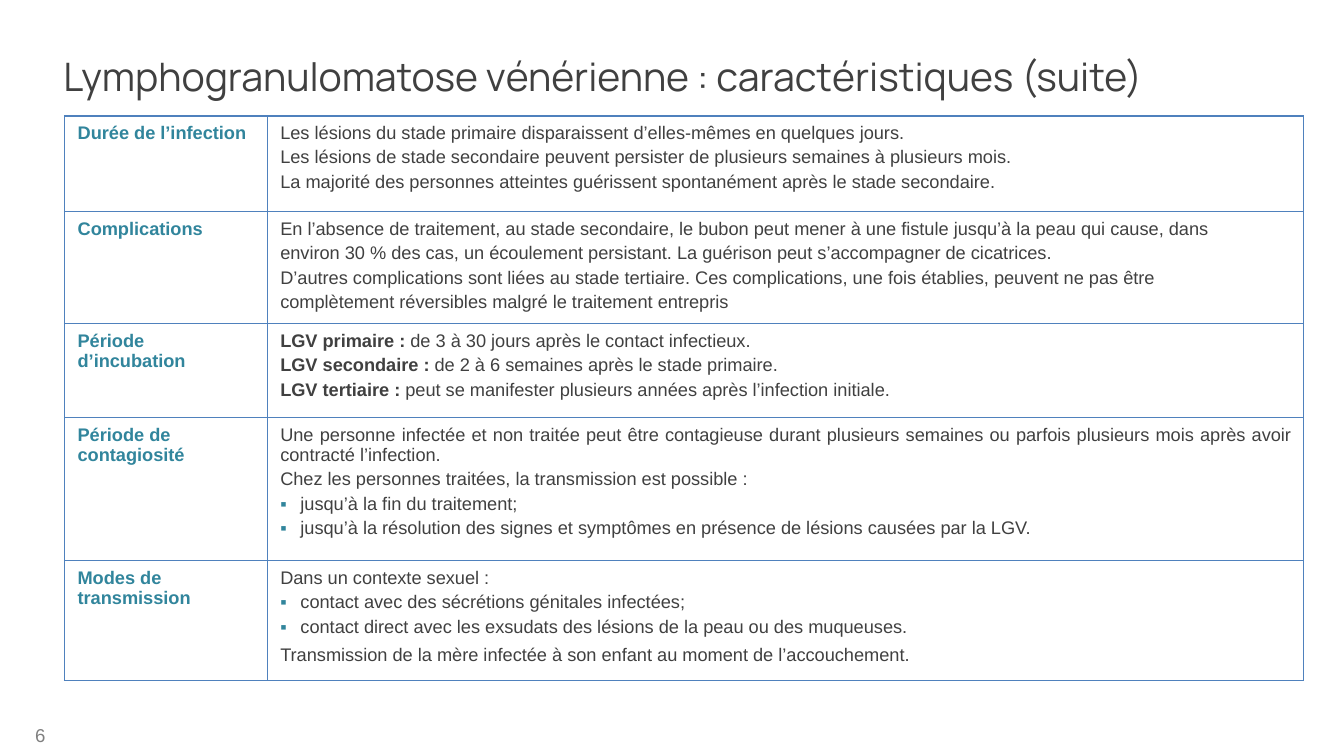
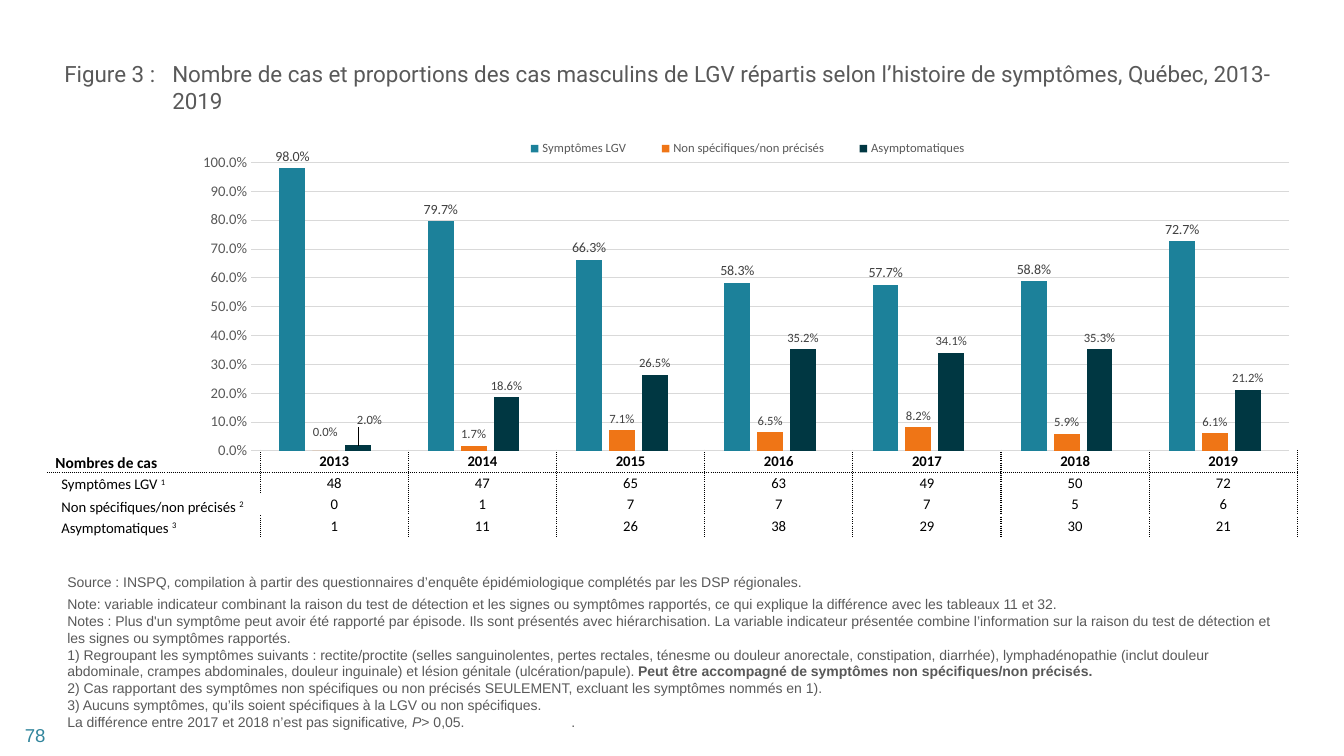
from lxml import etree
from pptx import Presentation
from pptx.chart.data import CategoryChartData
from pptx.dml.color import RGBColor
from pptx.enum.chart import XL_CHART_TYPE, XL_LABEL_POSITION, XL_LEGEND_POSITION, XL_TICK_MARK
from pptx.enum.text import MSO_ANCHOR, PP_ALIGN
from pptx.oxml import parse_xml
from pptx.oxml.ns import nsdecls, qn
from pptx.util import Inches, Pt

TEAL = RGBColor(0x31, 0x85, 0x9C)
DARK = RGBColor(0x40, 0x40, 0x40)
GREY = RGBColor(0x59, 0x59, 0x59)
PALE = RGBColor(0x80, 0x80, 0x80)
BLACK = RGBColor(0, 0, 0)
WHITE = RGBColor(0xFF, 0xFF, 0xFF)
BLUE = RGBColor(0x4F, 0x81, 0xBD)
GRID = RGBColor(0xD9, 0xD9, 0xD9)
SEA = RGBColor(0x1C, 0x81, 0x9A)
AMBER = RGBColor(0xEF, 0x75, 0x16)
NAVY = RGBColor(0x00, 0x37, 0x42)
LEFT, RIGHT, MID, FULL = PP_ALIGN.LEFT, PP_ALIGN.RIGHT, PP_ALIGN.CENTER, PP_ALIGN.JUSTIFY
TOP, CENTER, BOTTOM = MSO_ANCHOR.TOP, MSO_ANCHOR.MIDDLE, MSO_ANCHOR.BOTTOM
COLUMN = XL_CHART_TYPE.COLUMN_CLUSTERED
OUTER = XL_LABEL_POSITION.OUTSIDE_END
UPPER = XL_LEGEND_POSITION.TOP
NONE = XL_TICK_MARK.NONE


def write(para, text, name, size, color, align=LEFT):
    para.alignment = align
    for i, part in enumerate(text.split("*")):
        if part:
            run = para.add_run()
            run.text = part
            run.font.name, run.font.size = name, Pt(size)
            run.font.color.rgb = color
            run.font.bold = i % 2 == 1


def edge(cell, sides, color, dash):
    props = cell._tc.get_or_add_tcPr()
    for i, side in enumerate(sides):
        props.insert(i, parse_xml(
            f'<a:ln{side} {nsdecls("a")} w="12700"><a:solidFill><a:srgbClr val="{color}"/>'
            f'</a:solidFill><a:prstDash val="{dash}"/></a:ln{side}>'))


prs = Presentation()
prs.slide_width, prs.slide_height = Inches(13.33), Inches(7.5)
traits, figure = [prs.slides.add_slide(prs.slide_layouts[6]) for _ in range(2)]

NOTES = [
    "Note: variable indicateur combinant la raison du test de détection et les signes ou symptômes rapportés, ce qui explique la différence avec les tableaux 11 et 32.",
    "Notes : Plus d'un symptôme peut avoir été rapporté par épisode. Ils sont présentés avec hiérarchisation. La variable indicateur présentée combine l’information sur la raison du test de détection et les signes ou symptômes rapportés.",
    "1) Regroupant les symptômes suivants : rectite/proctite (selles sanguinolentes, pertes rectales, ténesme ou douleur anorectale, constipation, diarrhée), lymphadénopathie (inclut douleur abdominale, crampes abdominales, douleur inguinale) et lésion génitale (ulcération/papule). *Peut être accompagné de symptômes non spécifiques/non précisés.*",
    "2) Cas rapportant des symptômes non spécifiques ou non précisés SEULEMENT, excluant les symptômes nommés en 1).",
    "3) Aucuns symptômes, qu’ils soient spécifiques à la LGV ou non spécifiques.",
    "La différence entre 2017 et 2018 n’est pas significative*, P*> 0,05.\t.",
]
SOURCE = "Source : INSPQ, compilation à partir des questionnaires d’enquête épidémiologique complétés par les DSP régionales."
HEAD = "Lymphogranulomatose vénérienne : caractéristiques (suite)"
CAPTION = "Figure 3 : \tNombre de cas et proportions des cas masculins de LGV répartis selon l’histoire de symptômes, Québec, 2013-2019"
FOOT = (0, 7.09, 0.55, 0.4)
texts = [
    (traits, (0.53, 0.13, 12, 1.25), CENTER, [HEAD], "Manrope", 28, DARK, LEFT),
    (traits, FOOT, CENTER, ["6"], "Arial", 13.3, PALE, RIGHT),
    (figure, FOOT, CENTER, ["78"], "Arial", 13.3, TEAL, RIGHT),
    (figure, (0.57, 5.86, 12.17, 1.45), TOP, NOTES, "Arial", 10, GREY, LEFT),
    (figure, (0.57, 5.64, 9, 0.27), TOP, [SOURCE], "Arial", 10, GREY, LEFT),
    (figure, (0.54, 0.55, 12.32, 0.64), TOP, [CAPTION], "Roboto", 16, GREY, LEFT),
]
for slide, spot, anchor, lines, name, size, color, align in texts:
    frame = slide.shapes.add_textbox(*map(Inches, spot)).text_frame
    frame.word_wrap, frame.vertical_anchor = True, anchor
    for i, line in enumerate(lines):
        para = frame.add_paragraph() if i else frame.paragraphs[0]
        write(para, line, name, size, color, align)
        props = para._p.get_or_add_pPr()
        if "\tNombre" in line:
            hang = Inches(1.07)
            props.set("marL", str(hang))
            props.set("indent", str(-hang))
        if ", P" in line:
            stops = etree.SubElement(props, qn("a:tabLst"))
            etree.SubElement(stops, qn("a:tab"), pos=str(Inches(5)), algn="l")
            para.runs[1].font.bold, para.runs[1].font.italic = False, True

ROWS = [
    ("Durée de l’infection", 0.95, [
        "Les lésions du stade primaire disparaissent d’elles-mêmes en quelques jours.",
        "Les lésions de stade secondaire peuvent persister de plusieurs semaines à plusieurs mois.",
        "La majorité des personnes atteintes guérissent spontanément après le stade secondaire."]),
    ("Complications", 1.11, [
        "En l’absence de traitement, au stade secondaire, le bubon peut mener à une fistule jusqu’à la peau qui cause, dans",
        "environ 30 % des cas, un écoulement persistant. La guérison peut s’accompagner de cicatrices.",
        "D’autres complications sont liées au stade tertiaire. Ces complications, une fois établies, peuvent ne pas être",
        "complètement réversibles malgré le traitement entrepris"]),
    ("Période d’incubation", 0.93, [
        "*LGV primaire :* de 3 à 30 jours après le contact infectieux.",
        "*LGV secondaire :* de 2 à 6 semaines après le stade primaire.",
        "*LGV tertiaire :* peut se manifester plusieurs années après l’infection initiale."]),
    ("Période de contagiosité", 1.42, [
        "Une personne infectée et non traitée peut être contagieuse durant plusieurs semaines ou parfois plusieurs mois après avoir contracté l’infection.",
        "Chez les personnes traitées, la transmission est possible :",
        "▪jusqu’à la fin du traitement;",
        "▪jusqu’à la résolution des signes et symptômes en présence de lésions causées par la LGV."]),
    ("Modes de transmission", 1.19, [
        "Dans un contexte sexuel :",
        "▪contact avec des sécrétions génitales infectées;",
        "▪contact direct avec les exsudats des lésions de la peau ou des muqueuses.",
        "Transmission de la mère infectée à son enfant au moment de l’accouchement."]),
]
table = traits.shapes.add_table(
    len(ROWS), 2, Inches(0.64), Inches(1.15), Inches(12.29), Inches(5.6)).table
table.first_row = table.horz_banding = False
table.columns[0].width, table.columns[1].width = Inches(2.01), Inches(10.28)
for r, (label, high, lines) in enumerate(ROWS):
    table.rows[r].height = Inches(high)
    for c in range(2):
        cell = table.cell(r, c)
        cell.fill.solid()
        cell.fill.fore_color.rgb = WHITE
        cell.margin_left = cell.margin_right = Inches(0.13)
        cell.margin_top, cell.margin_bottom = Inches(0.07), Inches(0.05)
        edge(cell, "LRTB", BLUE, "solid")
    write(table.cell(r, 0).text_frame.paragraphs[0], f"*{label}*", "Arial", 13, TEAL)
    frame = table.cell(r, 1).text_frame
    for i, line in enumerate(lines):
        para = frame.add_paragraph() if i else frame.paragraphs[0]
        if line.startswith("▪"):
            hang = Inches(0.2)
            props = para._p.get_or_add_pPr()
            props.set("marL", str(hang))
            props.set("indent", str(-hang))
            tint = etree.SubElement(props, qn("a:buClr"))
            etree.SubElement(tint, qn("a:srgbClr"), val=str(TEAL))
            etree.SubElement(props, qn("a:buFont"), typeface="Arial")
            etree.SubElement(props, qn("a:buChar"), char="▪")
        write(para, line.lstrip("▪"), "Arial", 13, DARK, FULL)
        if i:
            para.space_before = Pt(3)
        if line.startswith("Transmission"):
            para.space_before = Pt(6)

CASES = [
    ("*Nombres de cas*", 0.22, range(2013, 2020)),
    ("Symptômes LGV *1*", 0.21, [48, 47, 65, 63, 49, 50, 72]),
    ("Non spécifiques/non précisés *2*", 0.22, [0, 1, 7, 7, 7, 5, 6]),
    ("Asymptomatiques *3*", 0.21, [1, 11, 26, 38, 29, 30, 21]),
]
table = figure.shapes.add_table(
    4, 9, Inches(0.47), Inches(4.47), Inches(12.4), Inches(0.86)).table
table.first_row = table.horz_banding = False
for c, wide in enumerate([1.78, 0.33] + [1.47] * 7):
    table.columns[c].width = Inches(wide)
for r, (label, high, counts) in enumerate(CASES):
    table.rows[r].height = Inches(high)
    for c, value in enumerate([label, ""] + list(counts)):
        cell = table.cell(r, c)
        cell.fill.background()
        cell.margin_left = cell.margin_right = Inches(0.01)
        cell.margin_top = cell.margin_bottom = 0
        cell.vertical_anchor = CENTER if c else BOTTOM
        para = cell.text_frame.paragraphs[0]
        if c == 0:
            cell.margin_left = Inches(0.14 if r else 0.08)
            write(para, value, "Calibri", 10.5 if r else 11, BLACK)
            if r:
                para.runs[1].font.bold = False
                para.runs[1].font._element.set("baseline", "30000")
        elif c == 1:
            etree.SubElement(para._p, qn("a:endParaRPr"), sz="1050")
        else:
            write(para, f"{value}" if r else f"*{value}*", "Calibri", 10.5, BLACK, MID)
        sides = "L" if c > 2 or c == 2 and r != 2 else ""
        sides += "R" if c > 1 or c == 1 and r != 2 else ""
        edge(cell, sides + {0: "B", 1: "T"}.get(r, ""), BLACK, "sysDot")
table.cell(2, 0).merge(table.cell(2, 1))

SERIES = [
    ("Symptômes LGV", SEA, 10, [0.98, 0.797, 0.663, 0.583, 0.577, 0.588, 0.727]),
    ("Non spécifiques/non précisés", AMBER, 9, [0, 0.017, 0.071, 0.065, 0.082, 0.059, 0.061]),
    ("Asymptomatiques", NAVY, 9, [0.02, 0.186, 0.265, 0.352, 0.341, 0.353, 0.212]),
]
data = CategoryChartData(number_format="0.0%")
data.categories = [str(n) for n in range(1, 8)]
for name, color, size, shares in SERIES:
    data.add_series(name, shares)
chart = figure.shapes.add_chart(
    COLUMN, Inches(1.82), Inches(1.16), Inches(11.19), Inches(3.49), data).chart
chart.has_title = False
chart.font.name, chart.font.size = "Calibri", Pt(10)
chart.font.color.rgb = BLACK
chart.has_legend = True
legend = chart.legend
legend.position, legend.include_in_layout = UPPER, False
legend.font.name, legend.font.size = "Calibri", Pt(9)
legend.font.color.rgb = GREY
chart.category_axis.visible = False
axis = chart.value_axis
axis.minimum_scale, axis.maximum_scale, axis.major_unit = 0, 1, 0.1
axis.major_tick_mark = axis.minor_tick_mark = NONE
axis.format.line.fill.background()
axis.major_gridlines.format.line.color.rgb = GRID
axis.major_gridlines.format.line.width = Pt(0.75)
labels = axis.tick_labels
labels.number_format, labels.number_format_is_linked = "0.0%", False
labels.font.name, labels.font.size = "Calibri", Pt(10.5)
labels.font.color.rgb = GREY
plot = chart.plots[0]
plot.gap_width, plot.overlap, plot.vary_by_categories = 219, -27, False
for bars, (name, color, size, shares) in zip(plot.series, SERIES):
    bars.format.fill.solid()
    bars.format.fill.fore_color.rgb = color
    labels = bars.data_labels
    labels.show_value, labels.position = True, OUTER
    labels.number_format, labels.number_format_is_linked = "0.0%", False
    fonts = [labels.font]
    if color != SEA:
        label = bars.points[0].data_label
        label.position = OUTER
        fonts.append(label.font)
        right, down = (0, -0.02) if color == AMBER else (0.01, -0.04)
        index = bars._element.find(".//" + qn("c:dLbl")).find(qn("c:idx"))
        index.addnext(parse_xml(f'<c:numFmt {nsdecls("c")} formatCode="0.0%" sourceLinked="0"/>'))
        index.addnext(parse_xml(
            f'<c:layout {nsdecls("c")}><c:manualLayout><c:x val="{right}"/>'
            f'<c:y val="{down}"/></c:manualLayout></c:layout>'))
    for font in fonts:
        font.name, font.size = "Calibri", Pt(size)
        font.color.rgb = DARK
    bars._element.find(qn("c:dLbls")).append(parse_xml(
        f'<c:extLst {nsdecls("c")}><c:ext uri="{{CE6537A1-D6FC-4f65-9D91-7224C49458BB}}" '
        'xmlns:c15="http://schemas.microsoft.com/office/drawing/2012/chart">'
        '<c15:showLeaderLines val="0"/></c:ext></c:extLst>'))

space = chart._chartSpace
space.find(qn("c:chart")).addnext(parse_xml(
    f'<c:spPr {nsdecls("c", "a")}><a:noFill/><a:ln><a:noFill/></a:ln></c:spPr>'))
area = space.find(".//" + qn("c:plotArea"))
key = space.find(".//" + qn("c:legend"))
for home, place, inner, (x, y, w, h) in [
        (area, 0, '<c:layoutTarget val="inner"/>', (0.06, 0.13, 0.92, 0.82)),
        (key, 1, "", (0.28, 0.05, 0.44, 0.08))]:
    for old in home.findall(qn("c:layout")):
        home.remove(old)
    home.insert(place, parse_xml(
        f'<c:layout {nsdecls("c")}><c:manualLayout>{inner}<c:xMode val="edge"/><c:yMode val="edge"/>'
        f'<c:x val="{x}"/><c:y val="{y}"/><c:w val="{w}"/><c:h val="{h}"/></c:manualLayout></c:layout>'))

prs.save("out.pptx")
